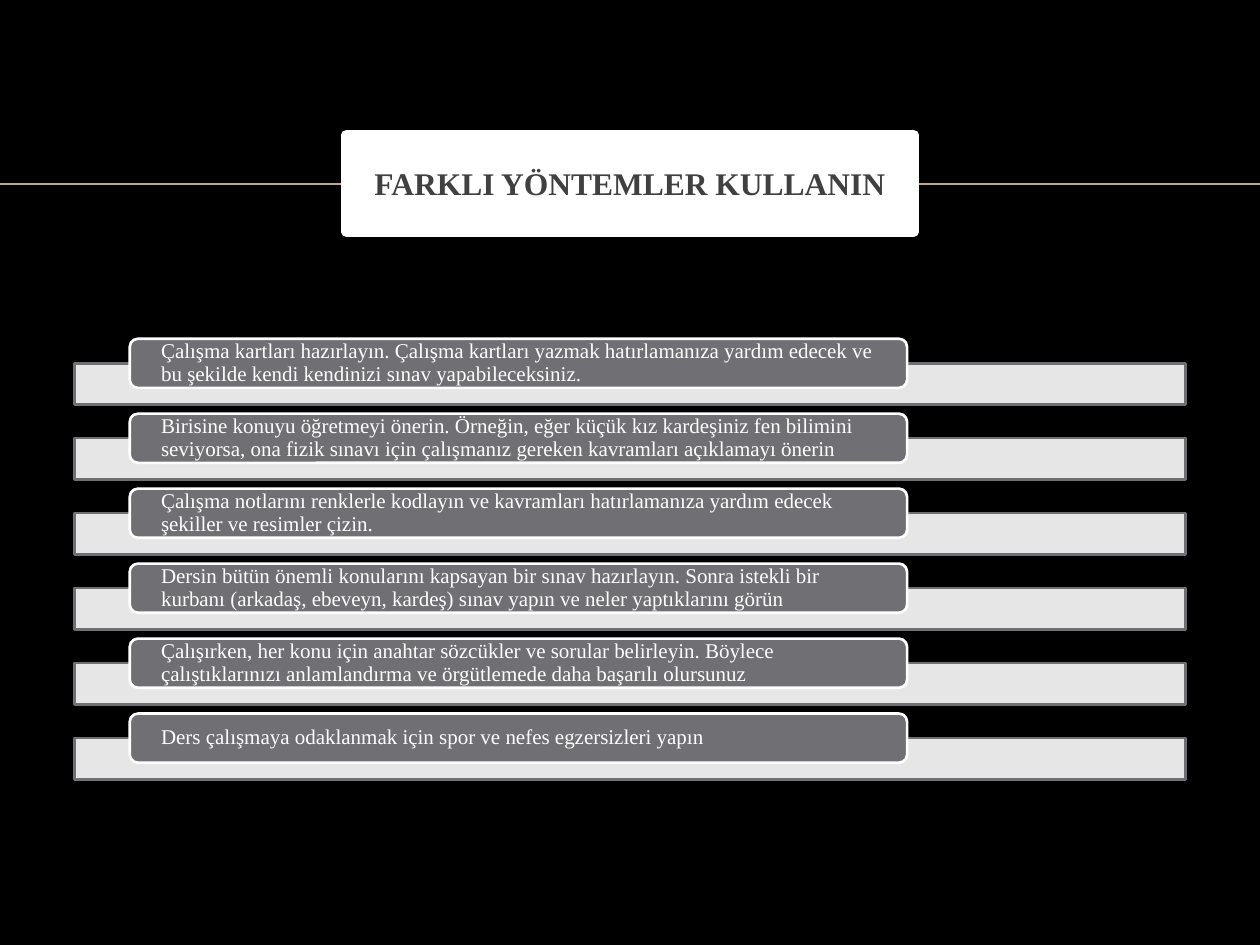
from lxml.etree import SubElement as Sub
from pptx import Presentation
from pptx.dml.color import RGBColor
from pptx.enum.shapes import MSO_CONNECTOR as Link, MSO_SHAPE as Kind
from pptx.enum.text import MSO_ANCHOR as Anchor, MSO_AUTO_SIZE as Fit, PP_ALIGN as Align
from pptx.oxml.ns import qn
from pptx.util import Inches, Pt

COLS, ROWS = 100, 75
TIPS = [
    "Çalışma kartları hazırlayın. Çalışma kartları yazmak hatırlamanıza yardım edecek ve bu şekilde kendi kendinizi sınav yapabileceksiniz.",
    "Birisine konuyu öğretmeyi önerin. Örneğin, eğer küçük kız kardeşiniz fen bilimini seviyorsa, ona fizik sınavı için çalışmanız gereken kavramları açıklamayı önerin",
    "Çalışma notlarını renklerle kodlayın ve kavramları hatırlamanıza yardım edecek şekiller ve resimler çizin.",
    "Dersin bütün önemli konularını kapsayan bir sınav hazırlayın. Sonra istekli bir kurbanı (arkadaş, ebeveyn, kardeş) sınav yapın ve neler yaptıklarını görün",
    "Çalışırken, her konu için anahtar sözcükler ve sorular belirleyin. Böylece çalıştıklarınızı anlamlandırma ve örgütlemede daha başarılı olursunuz",
    "Ders çalışmaya odaklanmak için spor ve nefes egzersizleri yapın",
]


def paint(fmt, tint, alpha=None):
    fmt.solid()
    fmt.fore_color.rgb = RGBColor.from_string(tint)
    if alpha is not None:
        node = fmt._xPr.find(".//" + qn("a:srgbClr"))
        Sub(node, qn("a:alpha")).set("val", str(alpha * 1000))


def write(shape, text, size=12, tint="FFFFFF", bold=False, align=Align.LEFT,
          pad=None, lead=1.0, above=0, below=0):
    frame = shape.text_frame
    frame.text = text
    frame.word_wrap = True
    frame.auto_size = Fit.NONE
    frame.vertical_anchor = Anchor.MIDDLE
    if pad is not None:
        frame.margin_left = frame.margin_right = Inches(pad)
        frame.margin_top = frame.margin_bottom = 0
    para = frame.paragraphs[0]
    para.alignment, para.line_spacing = align, lead
    para.space_before, para.space_after = Pt(above), Pt(below)
    font = para.runs[0].font
    font.name, font.size, font.bold = "Times New Roman", Pt(size), bold
    paint(font.fill, tint)


class Deck:
    white, gray, dark, gold = "FFFFFF", "6F6F74", "404040", "BBAA8A"

    def __init__(self):
        self.file = Presentation()
        self.file.slide_width, self.file.slide_height = Inches(10), Inches(7.5)
        self.slide = self.file.slides.add_slide(self.file.slide_layouts[5])
        paint(self.slide.background.fill, "000000")

    def place(self, col, row, wide, high):
        across = self.file.slide_width / COLS
        down = self.file.slide_height / ROWS
        return [round(n) for n in (col * across, row * down, wide * across, high * down)]

    def edge(self, shape, tint, width):
        paint(shape.line.fill, tint)
        shape.line.width = Pt(width)

    def title(self, text, *area):
        head = self.slide.shapes.title
        head.left, head.top, head.width, head.height = self.place(*area)
        paint(head.fill, self.white)
        self.edge(head, self.white, 6)
        write(head, text, size=18, tint=self.dark, bold=True, align=Align.CENTER, above=4)

    def rule(self, row):
        left, top, wide, _ = self.place(0, row, COLS, 0)
        line = self.slide.shapes.add_connector(Link.STRAIGHT, left, top, left + wide, top)
        self.edge(line, self.gold, 1)
        Sub(line.element.spPr, qn("a:effectLst"))
        self.slide.shapes.title.element.addprevious(line.element)

    def box(self, group, kind, area, fill, edge, alpha=None):
        shape = group.shapes.add_shape(kind, *self.place(*area))
        shape.shadow.inherit = False
        paint(shape.fill, fill, alpha)
        self.edge(shape, edge, 1.5)
        return shape

    def tips(self, texts, top, step):
        group = self.slide.shapes.add_group_shape()
        for i, text in enumerate(texts):
            row = top + i * step
            self.box(group, Kind.RECTANGLE, (5.9, row + 1.95, 88.2, 3.3),
                     self.white, self.gray, alpha=90)
            card = self.box(group, Kind.ROUNDED_RECTANGLE, (10.3, row, 61.7, 3.9),
                            self.gray, self.white)
            write(card, text, pad=0.23, lead=0.9, below=4.2)


def main():
    deck = Deck()
    deck.title("FARKLI YÖNTEMLER KULLANIN", 27.5, 10.7, 45, 7.7)
    deck.rule(14.6)
    deck.tips(TIPS, top=26.88, step=5.95)
    deck.file.save("out.pptx")


if __name__ == "__main__":
    main()
